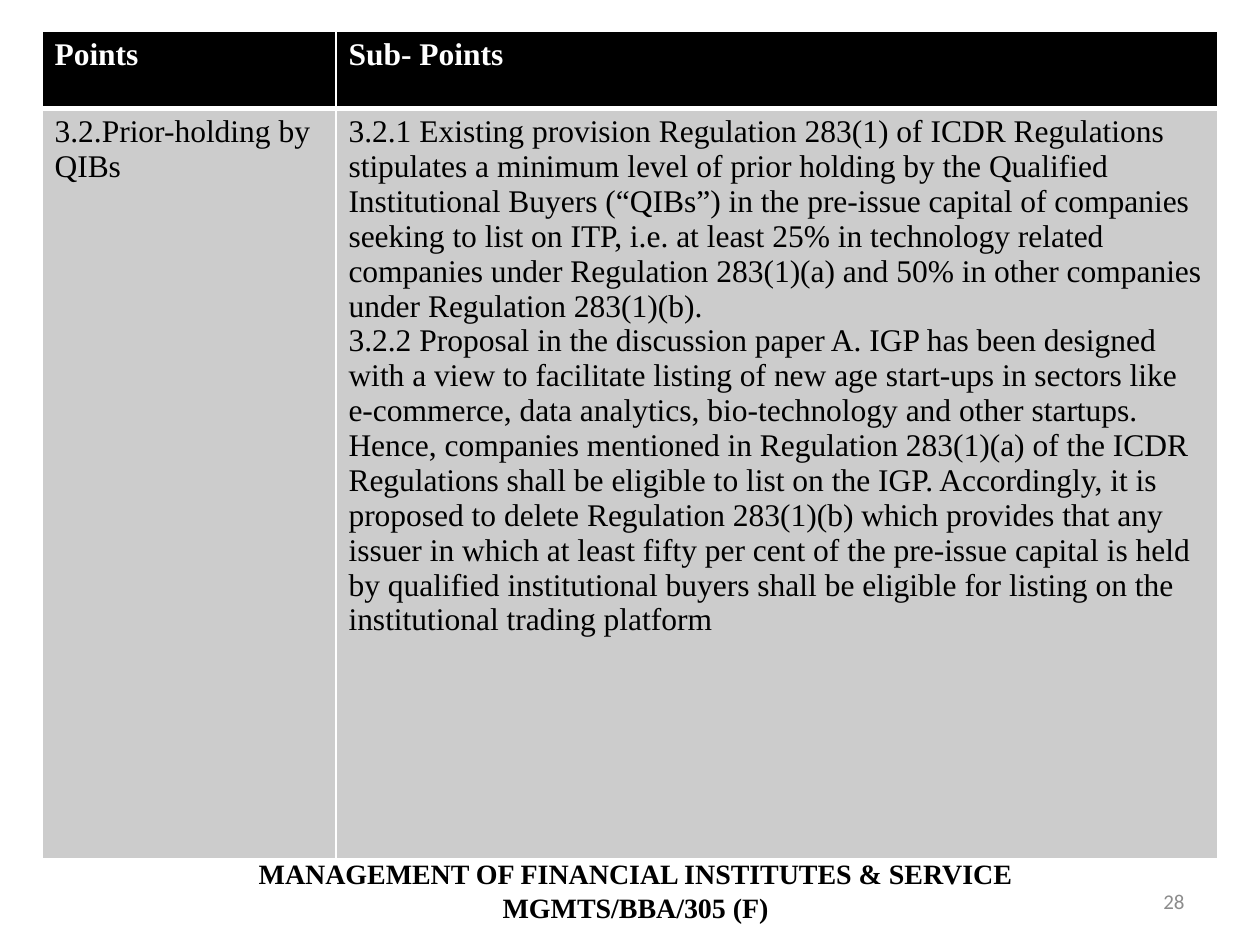
from dataclasses import dataclass

from lxml import etree
from pptx import Presentation
from pptx.dml.color import RGBColor
from pptx.enum.text import MSO_ANCHOR, PP_ALIGN
from pptx.oxml.ns import qn
from pptx.util import Inches, Pt

CENTER, RIGHT = PP_ALIGN.CENTER, PP_ALIGN.RIGHT
TOP, MIDDLE = MSO_ANCHOR.TOP, MSO_ANCHOR.MIDDLE
BLANK_LAYOUT = 6


@dataclass(frozen=True)
class Theme:
    serif: str = "Times New Roman"
    sans: str = "Calibri"
    black: str = "000000"
    white: str = "FFFFFF"
    body_fill: str = "CCCCCC"
    muted: str = "8C8C8C"
    table_size: int = 18
    footer_size: int = 16
    number_size: int = 12
    thin: int = 1
    thick: int = 3


THEME = Theme()

HEADER = ["Points", "Sub- Points"]
TOPIC = ["3.2.Prior-holding by QIBs"]
DETAILS = [
    "3.2.1 Existing provision Regulation 283(1) of ICDR Regulations stipulates a "
    "minimum level of prior holding by the Qualified Institutional Buyers (“QIBs”) "
    "in the pre-issue capital of companies seeking to list on ITP, i.e. at least 25% "
    "in technology related companies under Regulation 283(1)(a) and 50% in other "
    "companies under Regulation 283(1)(b).",
    "3.2.2 Proposal in the discussion paper A. IGP has been designed with a view to "
    "facilitate listing of new age start-ups in sectors like e-commerce, data "
    "analytics, bio-technology and other startups. Hence, companies mentioned in "
    "Regulation 283(1)(a) of the ICDR Regulations shall be eligible to list on the "
    "IGP. Accordingly, it is proposed to delete Regulation 283(1)(b) which provides "
    "that any issuer in which at least fifty per cent of the pre-issue capital is "
    "held by qualified institutional buyers shall be eligible for listing on the "
    "institutional trading platform",
]
FOOTER = ["MANAGEMENT OF FINANCIAL INSTITUTES & SERVICE", "MGMTS/BBA/305 (F)"]


def add_run(p, text, font, size, color, bold=False):
    r = p.add_run()
    r.text = text
    r.font.name = font
    r.font.size = Pt(size)
    r.font.bold = bold
    r.font.color.rgb = RGBColor.from_string(color)


def set_borders(cell, bottom):
    """Draw white rules on all four sides; they precede the fill in tcPr."""
    tcPr = cell._tc.get_or_add_tcPr()
    for i, side in enumerate("LRTB"):
        width = bottom if side == "B" else THEME.thin
        ln = etree.Element(qn(f"a:ln{side}"), w=str(Pt(width)))
        fill = etree.SubElement(ln, qn("a:solidFill"))
        etree.SubElement(fill, qn("a:srgbClr"), val=THEME.white)
        tcPr.insert(i, ln)


def fill_cell(cell, paragraphs, header):
    cell.fill.solid()
    cell.fill.fore_color.rgb = RGBColor.from_string(
        THEME.black if header else THEME.body_fill)
    set_borders(cell, THEME.thick if header else THEME.thin)
    tf = cell.text_frame
    for i, text in enumerate(paragraphs):
        p = tf.add_paragraph() if i else tf.paragraphs[0]
        add_run(p, text, THEME.serif, THEME.table_size,
                THEME.white if header else THEME.black, header)


def add_points_table(s, box):
    x, y, w, h = box
    rows = [[[title] for title in HEADER], [TOPIC, DETAILS]]
    table = s.shapes.add_table(len(rows), len(HEADER), x, y, w, h).table
    table.horz_banding = False
    # The topic column takes a quarter of the width
    table.columns[0].width = int(w / 4)
    table.columns[1].width = w - int(w / 4)
    table.rows[0].height = Inches(0.61)
    table.rows[1].height = h - Inches(0.61)
    for i, row in enumerate(rows):
        for j, paragraphs in enumerate(row):
            fill_cell(table.cell(i, j), paragraphs, header=i == 0)


def add_label(s, box, align, anchor):
    tf = s.shapes.add_textbox(*box).text_frame
    tf.word_wrap = True
    tf.vertical_anchor = anchor
    p = tf.paragraphs[0]
    p.alignment = align
    return p


def add_footer(s, box):
    p = add_label(s, box, CENTER, TOP)
    for i, line in enumerate(FOOTER):
        if i:
            p.add_line_break()
        add_run(p, line, THEME.serif, THEME.footer_size, THEME.black, True)


def add_page_number(s, box, number):
    p = add_label(s, box, RIGHT, MIDDLE)
    add_run(p, str(number), THEME.sans, THEME.number_size, THEME.muted)


def main():
    prs = Presentation()
    prs.slide_width, prs.slide_height = Inches(10), Inches(7.5)
    s = prs.slides.add_slide(prs.slide_layouts[BLANK_LAYOUT])

    def share(x, y, w, h):
        """Turn percentages of the slide into a box."""
        return (int(prs.slide_width * x / 100), int(prs.slide_height * y / 100),
                int(prs.slide_width * w / 100), int(prs.slide_height * h / 100))

    add_points_table(s, share(3.33, 3.33, 93.33, 87.6))
    add_footer(s, share(8.4, 90, 84.1, 8.53))
    add_page_number(s, share(71.7, 92.67, 23.3, 5.33), 28)
    prs.save("out.pptx")


if __name__ == "__main__":
    main()
